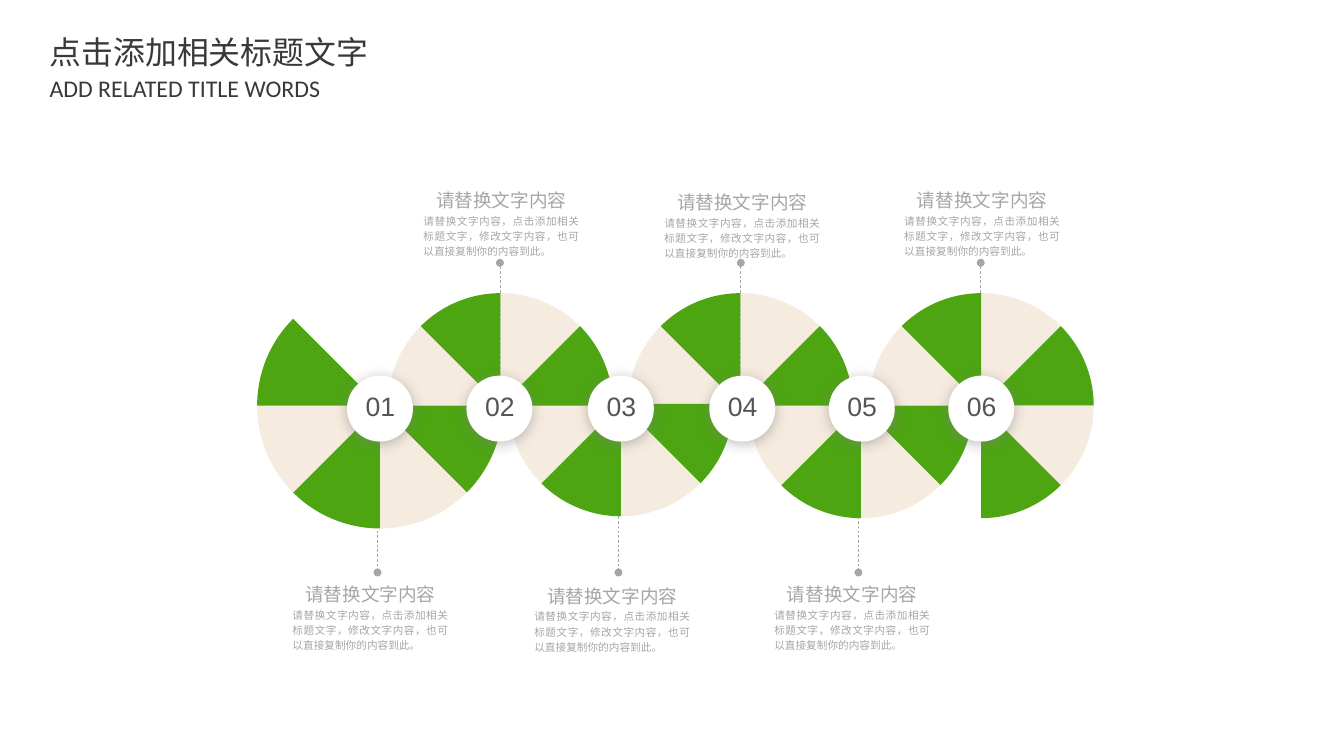
from dataclasses import dataclass

from pptx import Presentation
from pptx.chart.data import CategoryChartData
from pptx.dml.color import RGBColor
from pptx.enum.chart import XL_CHART_TYPE as ChartType
from pptx.enum.dml import MSO_LINE
from pptx.enum.shapes import MSO_CONNECTOR, MSO_SHAPE
from pptx.enum.text import MSO_ANCHOR as Anchor, PP_ALIGN as Align
from pptx.oxml import parse_xml
from pptx.oxml.ns import nsdecls, qn
from pptx.slide import Slide
from pptx.util import Inches, Pt

GREEN = RGBColor(0x4D, 0xA5, 0x12)
CREAM = RGBColor(0xF6, 0xEB, 0xDF)
WHITE = RGBColor(0xFF, 0xFF, 0xFF)
GREY = RGBColor(0xA6, 0xA6, 0xA6)
CHART_GREY = RGBColor(0x80, 0x80, 0x80)
NUMBER_GREY = RGBColor(0x55, 0x55, 0x55)
TITLE_GREY = RGBColor(0x3B, 0x38, 0x38)
SLICE_COLORS = {"G": GREEN, "C": CREAM}

CAPTION = "请替换文字内容"
DETAIL = "请替换文字内容，点击添加相关标题文字，修改文字内容，也可以直接复制你的内容到此。"
DISC_TOP, DISC_SIZE = 3.93, 0.69


@dataclass(frozen=True)
class TextStyle:
    """Font and paragraph settings of a text box."""

    size: float
    color: RGBColor
    font: str = "Arial"
    align: Align = Align.LEFT
    anchor: Anchor = Anchor.TOP
    spacing: float = 1.0
    inset: tuple[float, float] = (0, 0)
    wrap: bool = True


@dataclass(frozen=True)
class Step:
    """One numbered wheel; each letter of slices colours one eighth."""

    number: str
    slices: str
    wheel_left: float
    disc_left: float
    stem_x: float
    caption_left: float
    caption_top: float
    stem_top: float
    wheel_top: float = 2.86
    wheel_size: float = 2.77
    plot_share: float = 0.85

    @property
    def above(self) -> bool:
        """Tell whether the caption stands above the wheel."""
        return self.caption_top < self.wheel_top


HEADING = TextStyle(24, TITLE_GREY, "Noto Sans CJK SC", inset=(0.11, 0.05), wrap=False)
SUBHEADING = TextStyle(18, TITLE_GREY, "Calibri", inset=(0.11, 0.05), wrap=False)
CAPTION_STYLE = TextStyle(14, GREY, align=Align.CENTER)
DETAIL_STYLE = TextStyle(8, GREY, align=Align.JUSTIFY, spacing=1.2)
NUMBER_STYLE = TextStyle(20, NUMBER_GREY, align=Align.CENTER, anchor=Anchor.BOTTOM)

STEPS = [
    Step("01", "--GCGCG-", 2.65, 3.63, 3.95, 3.05, 6.10, 4.41, 2.92, 2.65, 0.97),
    Step("02", "CG----CG", 3.85, 4.88, 5.23, 4.42, 1.98, 2.75),
    Step("03", "--GCGC--", 5.11, 6.15, 6.47, 5.58, 6.12, 4.41, 2.84),
    Step("04", "CG----CG", 6.36, 7.42, 7.75, 6.94, 2.00, 2.75),
    Step("05", "--GCGC--", 7.62, 8.67, 8.98, 8.09, 6.10, 4.41),
    Step("06", "CGCG--CG", 8.88, 9.92, 10.26, 9.45, 1.98, 2.75),
]


def add_text(page: Slide, text: str, left: float, top: float, width: float,
             height: float, style: TextStyle) -> None:
    """Add a one-paragraph text box."""
    box = page.shapes.add_textbox(Inches(left), Inches(top), Inches(width), Inches(height))
    frame = box.text_frame
    frame.word_wrap = style.wrap
    frame.vertical_anchor = style.anchor
    frame.margin_left = frame.margin_right = Inches(style.inset[0])
    frame.margin_top = frame.margin_bottom = Inches(style.inset[1])
    para = frame.paragraphs[0]
    para.text = text
    para.alignment = style.align
    para.line_spacing = style.spacing
    para.font.name = style.font
    para.font.size = Pt(style.size)
    para.font.color.rgb = style.color


def add_stem(page: Slide, step: Step) -> None:
    """Add the dashed stem with a dot at its caption end."""
    x = Inches(step.stem_x)
    stem = page.shapes.add_connector(
        MSO_CONNECTOR.STRAIGHT, x, Inches(step.stem_top), x, Inches(step.stem_top + 1.58))
    stem.line.color.rgb = GREY
    stem.line.width = Pt(0.5)
    stem.line.dash_style = MSO_LINE.DASH
    dot = "headEnd" if step.above else "tailEnd"
    properties = stem.element.spPr
    properties.find(qn("a:ln")).append(parse_xml(f'<a:{dot} {nsdecls("a")} type="oval"/>'))
    properties.append(parse_xml(f'<a:effectLst {nsdecls("a")}/>'))


def add_wheel(page: Slide, step: Step) -> None:
    """Add a pie of eight equal slices, some of them unfilled."""
    data = CategoryChartData()
    data.categories = [str(index + 1) for index in range(len(step.slices))]
    data.add_series("Series 1", [12] * len(step.slices))
    size = Inches(step.wheel_size)
    chart = page.shapes.add_chart(
        ChartType.PIE, Inches(step.wheel_left), Inches(step.wheel_top), size, size, data).chart
    chart.has_legend = False
    chart.has_title = False
    chart.font.name = "Arial"
    chart.font.size = Pt(18)
    chart.font.color.rgb = CHART_GREY
    plot = chart.plots[0]
    plot.vary_by_categories = False
    for index, letter in enumerate(step.slices):
        part = plot.series[0].points[index].format
        part.line.fill.background()
        if letter in SLICE_COLORS:
            part.fill.solid()
            part.fill.fore_color.rgb = SLICE_COLORS[letter]
        else:
            part.fill.background()
    margin = (1 - step.plot_share) / 2
    area = chart.element.chart.plotArea
    for layout in area.findall(qn("c:layout")):
        area.remove(layout)
    area.insert(0, parse_xml(
        f'<c:layout {nsdecls("c")}><c:manualLayout><c:layoutTarget val="inner"/>'
        '<c:xMode val="edge"/><c:yMode val="edge"/>'
        f'<c:x val="{margin:.3f}"/><c:y val="{margin:.3f}"/>'
        f'<c:w val="{step.plot_share}"/><c:h val="{step.plot_share}"/>'
        '</c:manualLayout></c:layout>'))


def add_disc(page: Slide, step: Step) -> None:
    """Add the white shadowed hub and its number."""
    size = Inches(DISC_SIZE)
    disc = page.shapes.add_shape(
        MSO_SHAPE.ROUNDED_RECTANGLE, Inches(step.disc_left), Inches(DISC_TOP), size, size)
    disc.adjustments[0] = 0.5
    disc.fill.solid()
    disc.fill.fore_color.rgb = WHITE
    disc.line.fill.background()
    disc.shadow.inherit = False
    disc.element.spPr.find(qn("a:effectLst")).append(parse_xml(
        f'<a:outerShdw {nsdecls("a")} blurRad="{Pt(10)}" dist="{Pt(2)}" dir="5400000" '
        f'rotWithShape="0"><a:srgbClr val="{CHART_GREY}"><a:alpha val="50000"/>'
        '</a:srgbClr></a:outerShdw>'))
    add_text(page, step.number, step.disc_left + 0.13, 4.1, 0.44, 0.31, NUMBER_STYLE)


def add_caption(page: Slide, step: Step) -> None:
    """Add the caption and its detail text."""
    left, top = step.caption_left, step.caption_top
    add_text(page, CAPTION, left, top, 1.65, 0.24, CAPTION_STYLE)
    add_text(page, DETAIL, left + 0.01, top + 0.24, 1.63, 0.48, DETAIL_STYLE)


def main() -> None:
    """Build and save the slide."""
    deck = Presentation()
    deck.slide_width, deck.slide_height = Inches(14.06), Inches(7.91)
    page = deck.slides.add_slide(deck.slide_layouts[6])
    for step in STEPS:
        add_stem(page, step)
    for step in reversed(STEPS):
        add_wheel(page, step)
    for step in STEPS:
        add_disc(page, step)
        add_caption(page, step)
    add_text(page, "点击添加相关标题文字", 0.41, 0.29, 3.58, 0.51, HEADING)
    add_text(page, "ADD RELATED TITLE WORDS", 0.41, 0.72, 3.07, 0.41, SUBHEADING)
    deck.save("out.pptx")


if __name__ == "__main__":
    main()
